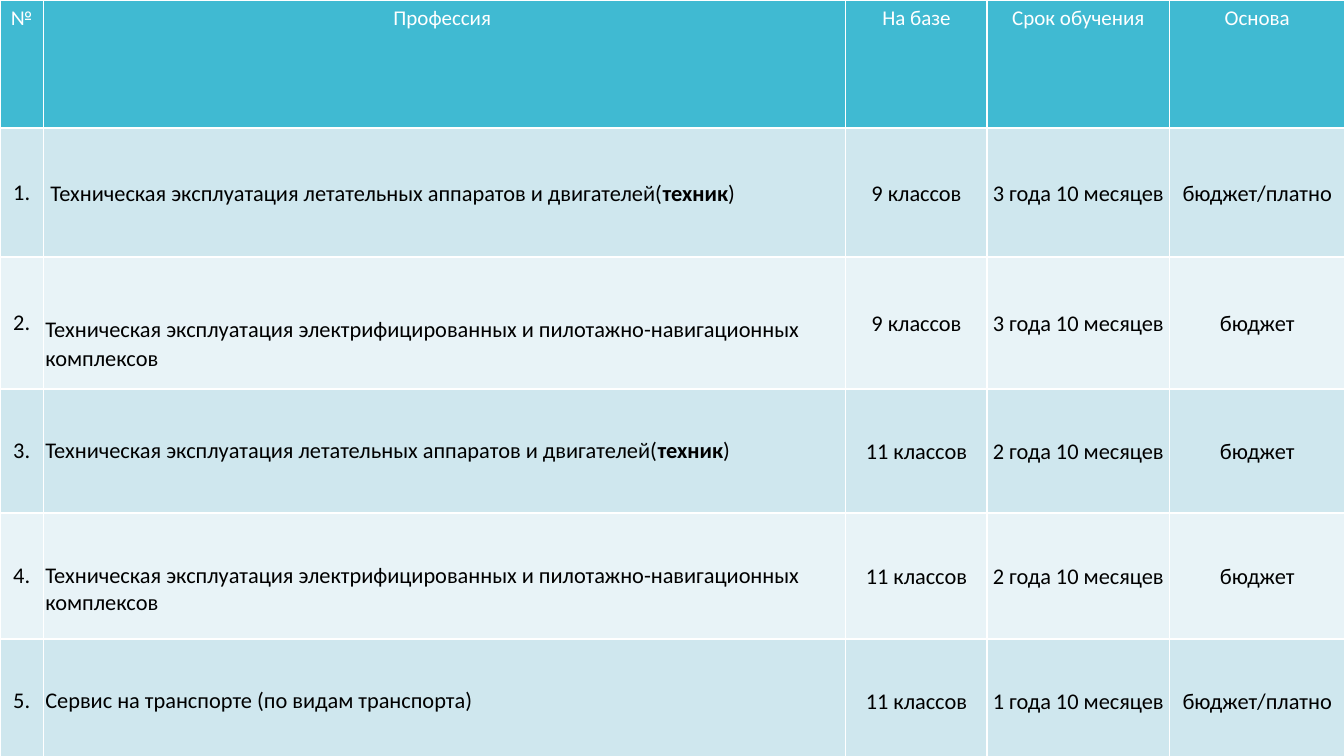
from lxml import etree
from pptx import Presentation
from pptx.dml.color import RGBColor
from pptx.enum.text import MSO_ANCHOR, PP_ALIGN
from pptx.oxml.ns import qn
from pptx.util import Inches, Pt

CENTER, LEFT = PP_ALIGN.CENTER, PP_ALIGN.LEFT
TOP, MIDDLE = MSO_ANCHOR.TOP, MSO_ANCHOR.MIDDLE

COLUMN_WIDTHS = [0.43, 7.96, 1.4, 1.81, 1.74]
ROW_HEIGHTS = [1.27, 1.28, 1.31, 1.23, 1.25, 1.23]
HEADERS = ["№", "Профессия ", "На базе", "Срок обучения", "Основа"]

MECHANIC = ["Техническая эксплуатация летательных аппаратов и двигателей(", "техник", ")"]
AVIONICS = ["Техническая эксплуатация электрифицированных и пилотажно-навигационных комплексов"]
SERVICE = ["Сервис на транспорте (по видам транспорта)"]

# Profession, its top margin, loose spacing, school base, term, funding
PROGRAMS = [
    ([" " + MECHANIC[0], *MECHANIC[1:]], 0.02, True,
     "9 классов", "3 года 10 месяцев", "бюджет/платно"),
    (AVIONICS, 0.42, True, "9 классов", "3 года 10 месяцев", "бюджет"),
    (MECHANIC, 0.02, False, "11 классов", "2 года 10 месяцев", "бюджет"),
    (AVIONICS, 0.29, False, "11 классов", "2 года 10 месяцев", "бюджет"),
    (SERVICE, 0.02, False, "11 классов", "1 года 10 месяцев", "бюджет/платно"),
]


def color(value):
    return RGBColor.from_string(value)


class TablePage:
    font = "Calibri"
    header_fill = "40BAD2"
    band_fills = ["CFE7EE", "E8F3F7"]
    border = "FFFFFF"

    def __init__(self, deck):
        self.page = deck.slides.add_slide(deck.slide_layouts[6])

    def table(self, widths, heights):
        frame = self.page.shapes.add_table(
            len(heights), len(widths), 0, 0,
            Inches(sum(widths)), Inches(sum(heights)))
        table = frame.table
        for column, width in zip(table.columns, widths):
            column.width = Inches(width)
        for row, height in zip(table.rows, heights):
            row.height = Inches(height)
        return table

    def borders(self, cell):
        properties = cell._tc.get_or_add_tcPr()
        for side in ("a:lnL", "a:lnR", "a:lnT", "a:lnB"):
            line = etree.SubElement(properties, qn(side), w=str(Pt(1)))
            fill = etree.SubElement(line, qn("a:solidFill"))
            etree.SubElement(fill, qn("a:srgbClr"), val=self.border)

    def cell(self, cell, spans, fill, size=16, ink="000000", align=CENTER,
             anchor=MIDDLE, margin=None, top=None, loose=False):
        self.borders(cell)
        cell.fill.solid()
        cell.fill.fore_color.rgb = color(fill)
        cell.vertical_anchor = anchor
        if margin is not None:
            cell.margin_left = cell.margin_right = Inches(margin)
            cell.margin_bottom = Inches(margin)
            cell.margin_top = Inches(margin if top is None else top)
        para = cell.text_frame.paragraphs[0]
        para.alignment = align
        if loose:
            para.line_spacing = 1.07
            para.space_after = Pt(8)
        # Every second span is bold
        for index, text in enumerate(spans):
            span = para.add_run()
            span.text = text
            span.font.name = self.font
            span.font.size = Pt(size)
            span.font.bold = index % 2 == 1
            span.font.color.rgb = color(ink)


def main():
    deck = Presentation()
    deck.slide_width, deck.slide_height = Inches(13.33), Inches(7.5)
    page = TablePage(deck)
    table = page.table(COLUMN_WIDTHS, ROW_HEIGHTS)

    # Header row
    for column, header in enumerate(HEADERS):
        page.cell(table.cell(0, column), [header], page.header_fill,
                  size=15, ink="FFFFFF", anchor=TOP)

    # Training programs
    for row, (profession, top, loose, *details) in enumerate(PROGRAMS, 1):
        fill = page.band_fills[(row - 1) % 2]
        page.cell(table.cell(row, 0), [f"{row}."], fill)
        page.cell(table.cell(row, 1), profession, fill, align=LEFT,
                  margin=0.02, top=top, loose=loose)
        for column, detail in enumerate(details, 2):
            page.cell(table.cell(row, column), [detail], fill, margin=0, loose=True)

    deck.save("out.pptx")


if __name__ == "__main__":
    main()
